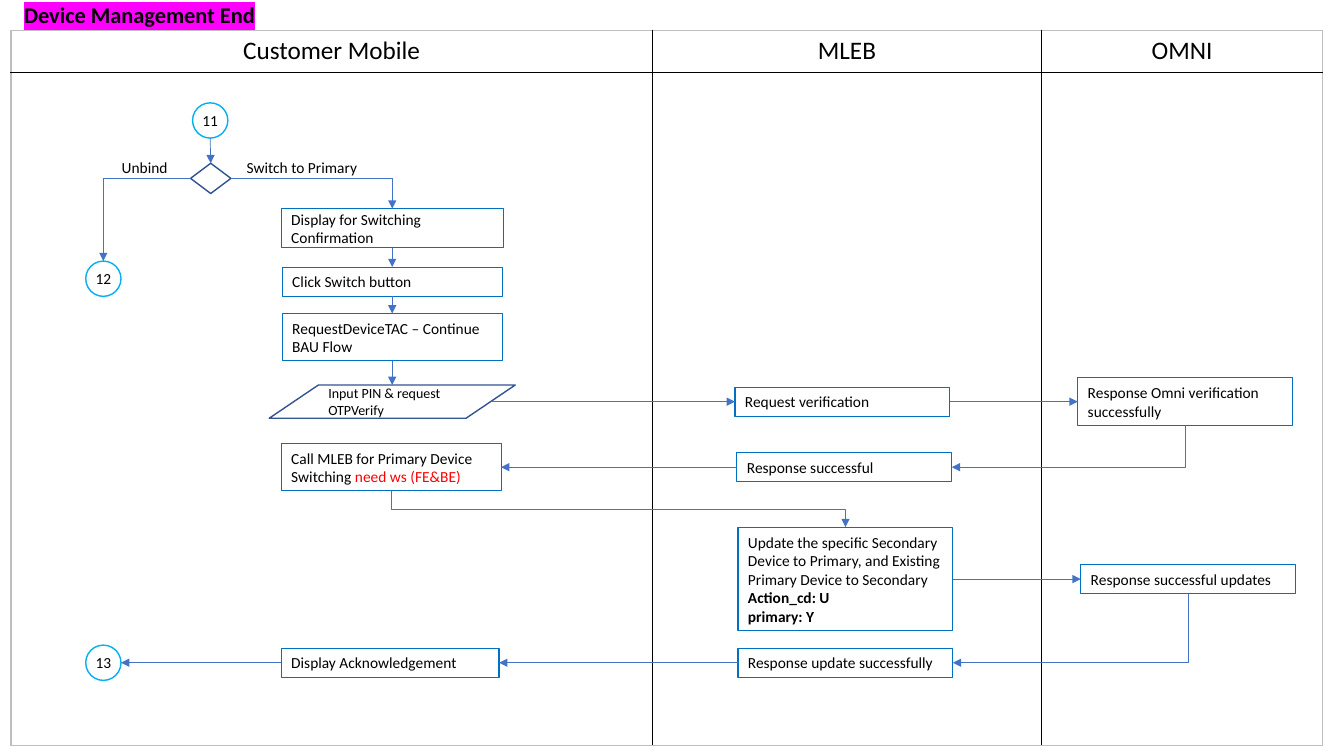
from dataclasses import dataclass

from lxml import etree
from pptx import Presentation
from pptx.dml.color import RGBColor
from pptx.enum.shapes import MSO_CONNECTOR, MSO_SHAPE
from pptx.enum.text import MSO_ANCHOR, PP_ALIGN
from pptx.oxml.ns import qn
from pptx.util import Inches, Pt

RECT, OVAL = MSO_SHAPE.RECTANGLE, MSO_SHAPE.OVAL
DIAMOND, DATA = MSO_SHAPE.DIAMOND, MSO_SHAPE.FLOWCHART_DATA
STRAIGHT, ELBOW = MSO_CONNECTOR.STRAIGHT, MSO_CONNECTOR.ELBOW
LEFT, CENTER, MIDDLE = PP_ALIGN.LEFT, PP_ALIGN.CENTER, MSO_ANCHOR.MIDDLE
TOP, WEST, BOTTOM, EAST = range(4)


@dataclass(frozen=True)
class Theme:
    """Colours, type sizes and line widths."""
    font: str = "Calibri"
    ink: str = "000000"
    alert: str = "FF0000"
    mark: str = "FF00FF"
    frame: str = "BFBFBF"
    step: str = "0070C0"
    ring: str = "00B0F0"
    gate: str = "325491"
    arrow: str = "4472C4"
    title: float = 16
    head: float = 18
    body: float = 11
    small: float = 10
    thin: float = 0.5
    line: float = 0.75
    bold: float = 1


T = Theme()
LANES = [("Customer Mobile", 6.36), ("MLEB", 3.86), ("OMNI", 2.79)]
ROWS = [0.42, 6.68]
STYLES = {
    "step": (RECT, T.step, T.line, T.body, LEFT),
    "ring": (OVAL, T.ring, T.bold, T.body, CENTER),
    "gate": (DIAMOND, T.gate, T.bold, T.body, CENTER),
    "data": (DATA, T.gate, T.bold, T.small, LEFT),
}
NODES = {
    "start": ("ring", (1.91, 1.02, 0.35, 0.35), [["11"]]),
    "unbind": ("ring", (0.85, 2.59, 0.35, 0.35), [["12"]]),
    "end": ("ring", (0.85, 6.4, 0.35, 0.35), [["13"]]),
    "choice": ("gate", (1.89, 1.62, 0.4, 0.3), []),
    "confirm": ("step", (2.79, 2.07, 2.2, 0.39),
                [["Display for Switching Confirmation"]]),
    "click": ("step", (2.8, 2.65, 2.18, 0.29), [["Click Switch button"]]),
    "tac": ("step", (2.8, 3.11, 2.18, 0.47),
            [["RequestDeviceTAC – Continue BAU Flow"]]),
    "pin": ("data", (2.67, 3.82, 2.44, 0.33),
            [["Input PIN & request OTPVerify"]]),
    "call": ("step", (2.79, 4.4, 2.18, 0.47),
             [["Call MLEB for Primary Device Switching ",
               ("need ws (FE&BE)", {"color": T.alert})]]),
    "ack": ("step", (2.79, 6.43, 2.16, 0.29), [["Display Acknowledgement"]]),
    "verify": ("step", (7.29, 3.84, 2.13, 0.29), [["Request verification"]]),
    "reply": ("step", (7.31, 4.49, 2.13, 0.29), [["Response successful"]]),
    "update": ("step", (7.32, 5.23, 2.13, 1.03),
               [["Update the specific Secondary Device to Primary, "
                 "and Existing Primary Device to Secondary"],
                [("Action_cd: U", {"bold": True})],
                [("primary: Y", {"bold": True})]]),
    "done": ("step", (7.32, 6.43, 2.13, 0.29),
             [["Response update successfully"]]),
    "omni": ("step", (10.69, 3.75, 2.13, 0.47),
             [["Response Omni verification successfully"]]),
    "saved": ("step", (10.72, 5.6, 2.13, 0.29),
              [["Response successful updates"]]),
}
LINKS = [
    ("start", BOTTOM, "choice", TOP), ("choice", WEST, "unbind", TOP),
    ("choice", EAST, "confirm", TOP), ("confirm", BOTTOM, "click", TOP),
    ("click", BOTTOM, "tac", TOP), ("tac", BOTTOM, "pin", TOP),
    ("pin", EAST, "verify", WEST), ("verify", EAST, "omni", WEST),
    ("omni", BOTTOM, "reply", EAST), ("reply", WEST, "call", EAST),
    ("call", BOTTOM, "update", TOP), ("update", EAST, "saved", WEST),
    ("saved", BOTTOM, "done", EAST), ("done", WEST, "ack", EAST),
    ("ack", WEST, "end", EAST),
]
LABELS = [("Unbind", (1.09, 1.56, 0.69, 0.2)),
          ("Switch to Primary", (2.32, 1.56, 1.35, 0.21))]


def write(frame, paras, size, align=LEFT, **base):
    """Fill a text frame with paragraphs of runs."""
    for i, runs in enumerate(paras):
        para = frame.paragraphs[0] if i == 0 else frame.add_paragraph()
        para.alignment = align
        for item in runs:
            text, extra = (item, {}) if isinstance(item, str) else item
            look = {"color": T.ink, "bold": False, **base, **extra}
            run = para.add_run()
            run.text = text
            run.font.color.rgb = RGBColor.from_string(look.pop("color"))
            look.update(size=Pt(size), name=T.font)
            for key, value in look.items():
                setattr(run.font, key, value)


def label(slide, box, text, size, align=CENTER, **look):
    """Place a text box and return its frame."""
    frame = slide.shapes.add_textbox(*map(Inches, box)).text_frame
    frame.word_wrap, frame.vertical_anchor = True, MIDDLE
    write(frame, [[text]], size, align, **look)
    return frame


def title(slide, box):
    """Place the highlighted heading."""
    frame = label(slide, box, "Device Management End", T.title, LEFT, bold=True)
    props = frame.paragraphs[0].runs[0].font._element
    mark = etree.Element(qn("a:highlight"))
    etree.SubElement(mark, qn("a:srgbClr"), val=T.mark)
    props.find(qn("a:solidFill")).addnext(mark)


def border(cell, side, color):
    """Draw one side of a cell."""
    props = cell._tc.get_or_add_tcPr()
    line = etree.SubElement(props, qn("a:" + side), w=str(Pt(T.bold)))
    fill = etree.SubElement(line, qn("a:solidFill"))
    etree.SubElement(fill, qn("a:srgbClr"), val=color)


def lanes(slide, box):
    """Draw the swimlane table."""
    table = slide.shapes.add_table(
        len(ROWS), len(LANES), *map(Inches, box)).table
    table.first_row = table.horz_banding = False
    for r, high in enumerate(ROWS):
        table.rows[r].height = Inches(high)
        for c, (name, wide) in enumerate(LANES):
            table.columns[c].width = Inches(wide)
            cell = table.cell(r, c)
            outer = {"lnL": c == 0, "lnR": c == len(LANES) - 1,
                     "lnT": r == 0, "lnB": r == len(ROWS) - 1}
            for side, rim in outer.items():
                border(cell, side, T.frame if rim else T.ink)
            cell.fill.background()
            if r == 0:
                write(cell.text_frame, [[name]], T.head, CENTER)


def node(slide, kind, box, paras):
    """Draw one flow shape."""
    form, color, width, size, align = STYLES[kind]
    shape = slide.shapes.add_shape(form, *map(Inches, box))
    shape.shadow.inherit = False
    shape.fill.background()
    shape.line.color.rgb = RGBColor.from_string(color)
    shape.line.width = Pt(width)
    frame = shape.text_frame
    frame.word_wrap, frame.vertical_anchor = kind != "ring", MIDDLE
    if kind == "ring":
        for side in ("left", "right", "top", "bottom"):
            setattr(frame, "margin_" + side, 0)
    write(frame, paras, size, align)
    return shape


def port(shape, side):
    """Return the point at the middle of a side."""
    inset = shape.width // 10 if shape.auto_shape_type == DATA else 0
    x, y = shape.left + shape.width // 2, shape.top + shape.height // 2
    return {TOP: (x, shape.top), WEST: (shape.left + inset, y),
            BOTTOM: (x, shape.top + shape.height),
            EAST: (shape.left + shape.width - inset, y)}[side]


def link(slide, a, out, b, into):
    """Join two shapes with an arrow."""
    (x1, y1), (x2, y2) = port(a, out), port(b, into)
    wide, high = abs(x2 - x1), abs(y2 - y1)
    bent = min(wide, high) > Inches(0.02)
    wire = slide.shapes.add_connector(
        ELBOW if bent else STRAIGHT, x1, y1, x2, y2)
    if a.auto_shape_type in (RECT, DIAMOND):
        wire.begin_connect(a, out)
    if b.auto_shape_type in (RECT, DIAMOND):
        wire.end_connect(b, into)
    wire.line.color.rgb = RGBColor.from_string(T.arrow)
    wire.line.width = Pt(T.thin)
    props = wire._element.spPr
    etree.SubElement(props.find(qn("a:ln")), qn("a:tailEnd"), type="triangle")
    etree.SubElement(props, qn("a:effectLst"))
    if bent and (out, into) != (BOTTOM, TOP):
        props.find(qn("a:prstGeom")).set("prst", "bentConnector2")
    if bent and out == BOTTOM:
        east = x2 > x1
        wire.left, wire.top = (x1 + x2 - high) // 2, (y1 + y2 - wide) // 2
        wire.width, wire.height = high, wide
        turn = props.find(qn("a:xfrm"))
        turn.set("rot", str((270 if east else 90) * 60000))
        turn.set("flipH", "1" if east else "0")


def flow(slide):
    """Draw the steps, arrows and branch labels."""
    shapes = {name: node(slide, *data) for name, data in NODES.items()}
    for a, out, b, into in LINKS:
        link(slide, shapes[a], out, shapes[b], into)
    for text, box in LABELS:
        label(slide, box, text, T.body)


def main():
    """Build and save the deck."""
    deck = Presentation()
    deck.slide_width, deck.slide_height = Inches(13.33), Inches(7.5)
    slide = deck.slides.add_slide(deck.slide_layouts[6])
    lanes(slide, (0.11, 0.3, 13.01, 7.1))
    title(slide, (0.14, -0.04, 6.78, 0.37))
    flow(slide)
    deck.save("out.pptx")


if __name__ == "__main__":
    main()
